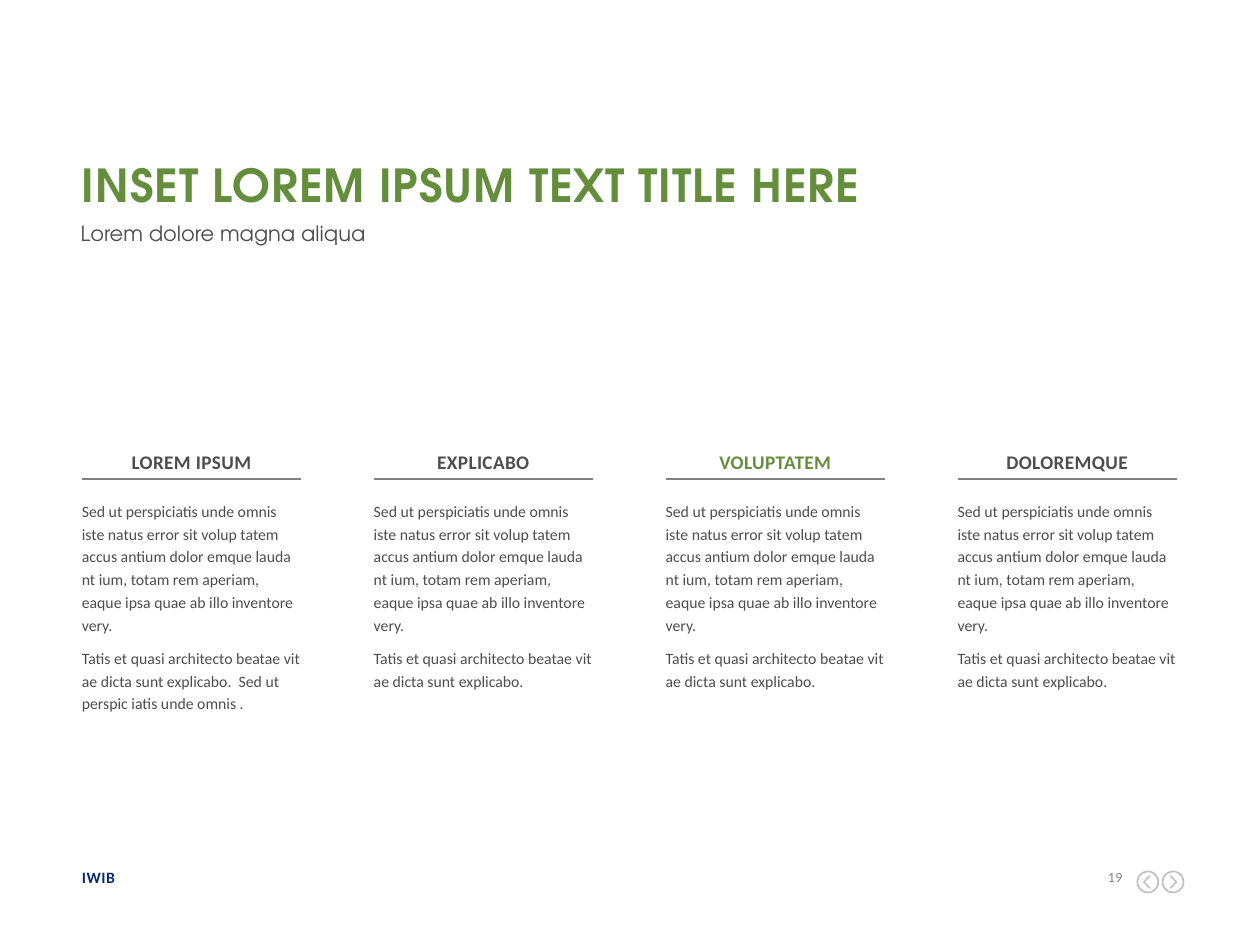
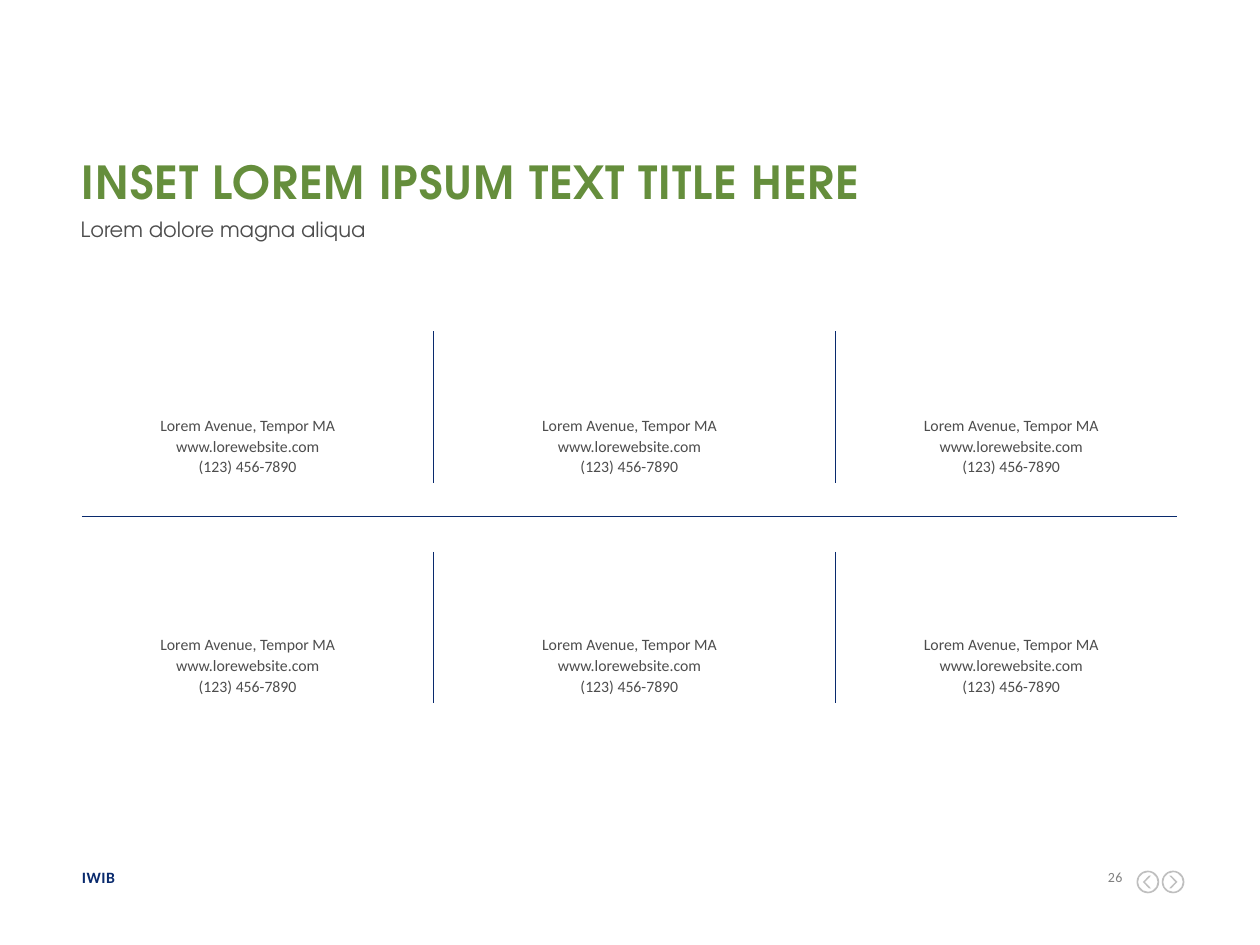
from pptx import Presentation, util as u
from pptx.dml.color import RGBColor
from pptx.enum import shapes, text
from pptx.oxml.ns import qn
from lxml import etree

# Shared style: the grid has 100 columns and 75 rows on a 10 x 7.5 inch slide
COLUMNS, ROWS = 100, 75
LEFT, RIGHT = 6.5, 93.4
GREEN, NAVY, INK = "658E3C", "092A6D", "4D4D4D"
RULE, NUMBER, BUTTON = "808285", "808080", "BFBFBF"
BODY, DISPLAY = "Calibri", "TeX Gyre Adventor"

LEFT_ALIGN, CENTER, RIGHT_ALIGN = (
    text.PP_ALIGN.LEFT, text.PP_ALIGN.CENTER, text.PP_ALIGN.RIGHT)

FORMATS = {
    "title": dict(name=DISPLAY, size=u.Pt(26), bold=True),
    "subtitle": dict(name=DISPLAY, size=u.Pt(12)),
    "heading": dict(name=BODY, size=u.Pt(11), bold=True),
    "body": dict(name=BODY, size=u.Pt(9)),
    "brand": dict(name=BODY, size=u.Pt(9), bold=True),
    "number": dict(name=BODY, size=u.Pt(8)),
}
# Letter spacing in hundredths of a point
TRACKING = {"title": 50, "heading": 20, "brand": 30, "number": 30}


def color(value):
    return RGBColor.from_string(value)


class Deck:
    """Holds the style, the presentation and the current slide."""

    def __init__(self):
        self.deck = Presentation()
        self.deck.slide_width, self.deck.slide_height = u.Inches(10), u.Inches(7.5)
        self.page = None

    def x(self, columns):
        return round(self.deck.slide_width * columns / COLUMNS)

    def y(self, rows):
        return round(self.deck.slide_height * rows / ROWS)

    def place(self, left, top, width, height):
        return self.x(left), self.y(top), self.x(width), self.y(height)

    def text(self, area, paragraphs, style, ink=INK, **layout):
        """Add a text box; layout holds paragraph attributes."""
        box = self.page.shapes.add_textbox(*self.place(*area))
        frame = box.text_frame
        frame.word_wrap = True
        for side in ("left", "top", "right", "bottom"):
            setattr(frame, f"margin_{side}", 0)
        for index, words in enumerate(paragraphs):
            para = frame.add_paragraph() if index else frame.paragraphs[0]
            para.text = words
            for name, value in layout.items():
                setattr(para, name, value)
            for span in para.runs:
                for name, value in FORMATS[style].items():
                    setattr(span.font, name, value)
                span.font.color.rgb = color(ink)
                if style in TRACKING:
                    span._r.get_or_add_rPr().set("spc", str(TRACKING[style]))

    def line(self, start, end, ink, width):
        rule = self.page.shapes.add_connector(
            shapes.MSO_CONNECTOR.STRAIGHT,
            self.x(start[0]), self.y(start[1]), self.x(end[0]), self.y(end[1]))
        rule.line.color.rgb = color(ink)
        rule.line.width = u.Pt(width)
        etree.SubElement(rule._element.spPr, qn("a:effectLst"))

    def shape(self, kind, area, fill, adjustment, rotation=0):
        shape = self.page.shapes.add_shape(kind, *self.place(*area))
        shape.shadow.inherit = False
        shape.fill.solid()
        shape.fill.fore_color.rgb = color(fill)
        shape.line.fill.background()
        shape.adjustments[0] = adjustment
        shape.rotation = rotation

    def button(self, left, rotation):
        """Add a ringed navigation arrow, turned by the rotation."""
        shift = 0.5 if rotation else 0.6
        self.shape(shapes.MSO_SHAPE.DONUT, (left, 69.1, 1.8, 1.8), BUTTON, 0.07)
        self.shape(shapes.MSO_SHAPE.CHEVRON, (left + shift, 69.5, 0.65, 1),
                   BUTTON, 0.75, rotation)

    def new_page(self, number, title_top):
        """Start a slide with its footer, title and subtitle."""
        self.page = self.deck.slides.add_slide(self.deck.slide_layouts[6])
        self.text((LEFT, 68.9, 19.5, 1.5), ["IWIB"], "brand", NAVY)
        self.text((86.8, 68.9, 2.3, 1.3), [number], "number", NUMBER,
                  alignment=RIGHT_ALIGN)
        self.button(90.2, 180)
        self.button(92.2, 0)
        self.text((LEFT, title_top, 87, 3.4),
                  ["INSET LOREM IPSUM TEXT TITLE HERE"], "title", GREEN)
        self.text((LEFT - 0.1, title_top + 5.3, 87, 4.2),
                  ["Lorem dolore magna aliqua"], "subtitle",
                  line_spacing=u.Pt(12))


def build_columns(deck):
    """Four headed text columns."""
    deck.new_page("19", 12.5)
    width = 17.4
    headings = ["LOREM IPSUM", "EXPLICABO", "VOLUPTATEM", "DOLOREMQUE"]
    pitch = (RIGHT - LEFT - width) / (len(headings) - 1)
    intro = ("Sed ut perspiciatis unde omnis iste natus error sit volup tatem "
             "accus antium dolor emque lauda nt ium, totam rem aperiam, eaque "
             "ipsa quae ab illo inventore very.")
    closing = "Tatis et quasi architecto beatae vit ae dicta sunt explicabo."
    extra = "  Sed ut perspic iatis unde omnis ."
    for index, heading in enumerate(headings):
        left = LEFT + index * pitch
        last = closing if index else closing + extra
        deck.text((left, 39.5, width, 17.1), [intro, last], "body",
                  line_spacing=u.Pt(13), space_after=u.Pt(6))
        deck.text((left, 35.2, width, 2.2), [heading], "heading",
                  GREEN if heading == "VOLUPTATEM" else INK,
                  alignment=CENTER, line_spacing=u.Pt(17), space_after=u.Pt(6))
        deck.line((left, 38), (left + width, 38), RULE, 1)


def build_contacts(deck):
    """Two rows of three contacts, split by rules."""
    deck.new_page("26", 12.2)
    deck.line((LEFT, 41), (RIGHT, 41), NAVY, 0.75)
    contact = ["Lorem Avenue, Tempor MA\nwww.lorewebsite.com", "(123) 456-7890"]
    for rule_top, contact_top in ((26.3, 32.8), (43.8, 50.2)):
        for column in (34.4, 66.3):
            deck.line((column, rule_top), (column, rule_top + 12), NAVY, 0.75)
        for index in range(3):
            deck.text((8.4 + 30.3 * index, contact_top, 22.5, 5), contact,
                      "body", alignment=CENTER, line_spacing=u.Pt(12))


def main():
    deck = Deck()
    build_columns(deck)
    build_contacts(deck)
    deck.deck.save("out.pptx")


if __name__ == "__main__":
    main()
